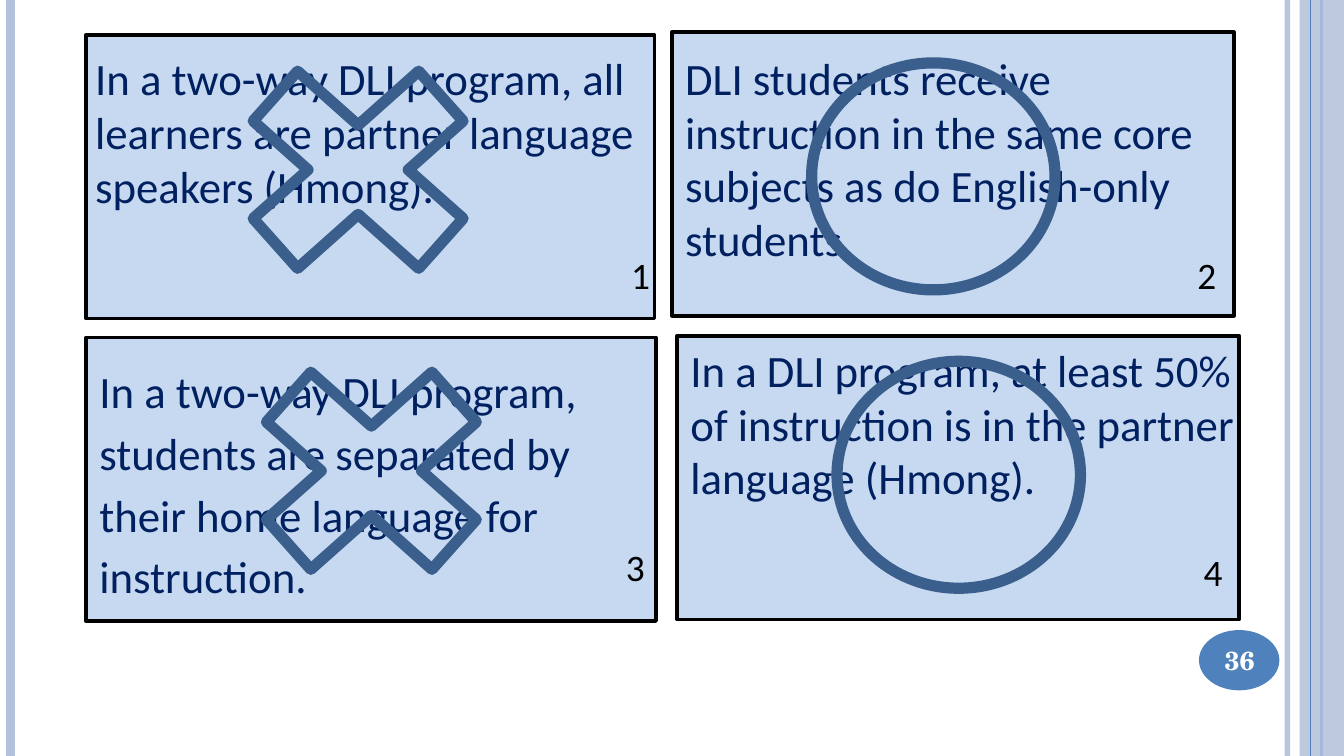
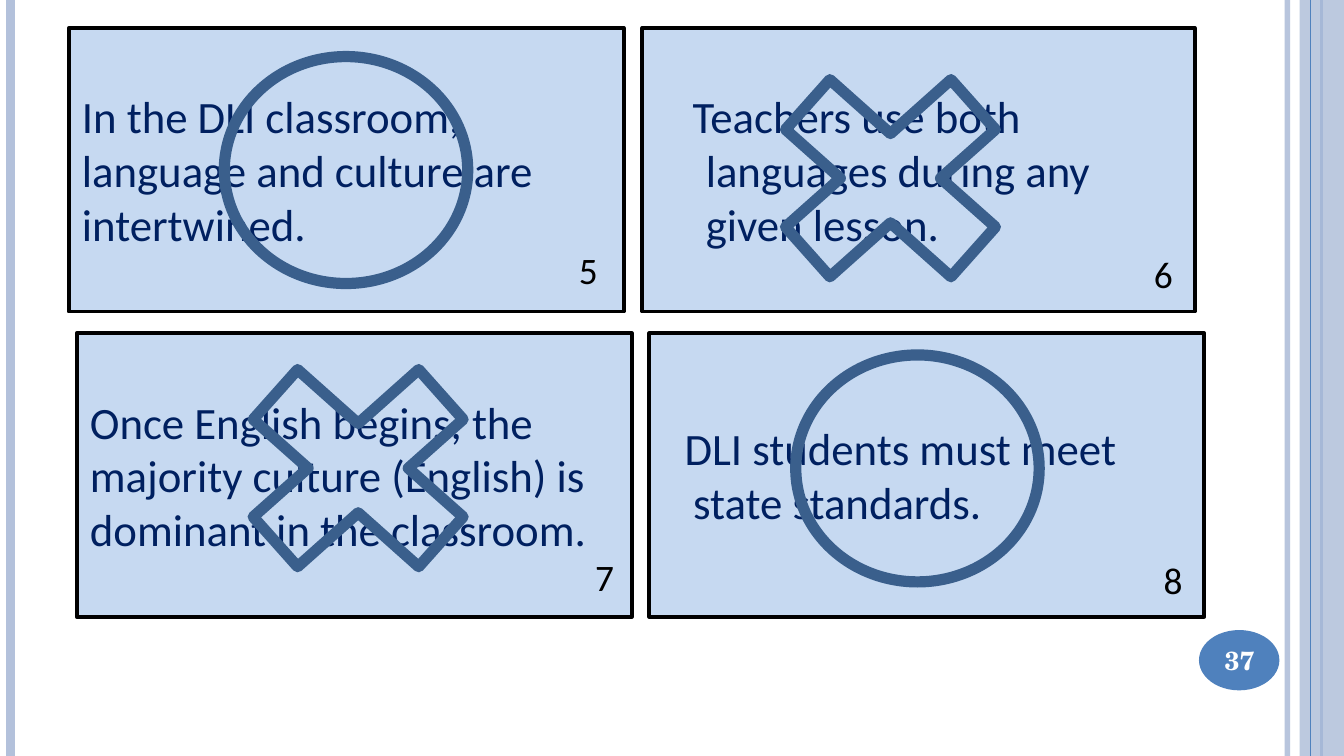
from lxml import etree
from pptx import Presentation
from pptx.dml.color import RGBColor as Rgb
from pptx.enum.shapes import MSO_CONNECTOR as Link, MSO_SHAPE as Form
from pptx.enum.text import MSO_ANCHOR as Anchor, MSO_AUTO_SIZE as Auto, PP_ALIGN as Align
from pptx.oxml.ns import qn
from pptx.util import Cm, Pt

WIDE, HIGH = 25.4, 14.29
PALE, BLUE, CARD = "B3C1DB", "4F81BD", "C6D9F1"
NAVY, MARK, BLACK, WHITE = "002060", "3A5F8C", "000000", "FFFFFF"
SANS, SERIF = "Calibri", "TeX Gyre Schola"


def tint(code):
    return Rgb.from_string(code)


def fade(node, share):
    """Make the first colour under an XML node partly see-through."""
    color = next(node.iter(qn("a:srgbClr")))
    etree.SubElement(color, qn("a:alpha")).set("val", str(share * 1000))


class Deck:
    def __init__(self):
        self.file = Presentation()
        self.file.slide_width, self.file.slide_height = Cm(WIDE), Cm(HIGH)
        self.slide = None

    def page(self, number):
        """Start a slide with the side bands and the number badge."""
        self.slide = self.file.slides.add_slide(self.file.slide_layouts[6])
        back = self.slide.background.fill
        back.solid()
        back.fore_color.rgb = tint(WHITE)
        self.rule(24.33, PALE, 3, 93)
        self.rule(0.2, PALE, 4.5)
        self.rule(24.97, BLUE, 1.5)
        band = self.shape(Form.RECTANGLE, (24.56, 0, 0.84, HIGH), PALE)
        fade(band._element.spPr, 87)
        self.rule(24.77, BLUE, 0.75)
        self.shape(Form.OVAL, (22.66, 11.91, 1.52, 1.14), BLUE)
        badge = self.label(str(number), (22.58, 11.94, 1.7, 1.09), 14, WHITE,
                           SERIF, bold=True, align=Align.CENTER)
        badge.text_frame.auto_size = Auto.NONE
        badge.text_frame.vertical_anchor = Anchor.MIDDLE

    def edge(self, line, color, width):
        line.color.rgb = tint(color)
        line.width = Pt(width)
        etree.SubElement(line._get_or_add_ln(), qn("a:round"))

    def rule(self, x, color, width, share=None):
        """Draw an upright line over the full height."""
        item = self.slide.shapes.add_connector(
            Link.STRAIGHT, Cm(x), Cm(0), Cm(x), Cm(HIGH))
        self.edge(item.line, color, width)
        if share:
            fade(item._element.spPr, share)
        etree.SubElement(item._element.spPr, qn("a:effectLst"))

    def shape(self, form, area, fill=None, line=None, width=2):
        item = self.slide.shapes.add_shape(form, *map(Cm, area))
        item.shadow.inherit = False
        if fill:
            item.fill.solid()
            item.fill.fore_color.rgb = tint(fill)
        else:
            item.fill.background()
        if line:
            self.edge(item.line, line, width)
        else:
            item.line.fill.background()
        return item

    def text(self, frame, words, size, color, font=SANS, bold=False,
             align=Align.LEFT, space=None, dent=None):
        """Fill a frame; dent holds the left edge of first and later lines."""
        frame.word_wrap = True
        para = frame.paragraphs[0]
        para.alignment = align
        para.line_spacing = space
        if dent:
            first, rest = map(Cm, dent)
            props = para._p.get_or_add_pPr()
            props.set("marL", str(rest))
            props.set("indent", str(first - rest))
        for index, part in enumerate(words.split("\n")):
            if index:
                para.add_line_break()
            run = para.add_run()
            run.text = part
            run.font.name, run.font.size, run.font.bold = font, Pt(size), bold
            run.font.color.rgb = tint(color)

    def label(self, words, area, size, color, font=SANS, **style):
        box = self.slide.shapes.add_textbox(*map(Cm, area))
        self.text(box.text_frame, words, size, color, font, **style)
        box.text_frame.auto_size = Auto.SHAPE_TO_FIT_TEXT
        return box

    def card(self, x, y, wide, words="", foot=0.13, **style):
        item = self.shape(Form.RECTANGLE, (x, y, wide, 5.36), CARD, BLACK)
        if words:
            frame = item.text_frame
            frame.vertical_anchor = Anchor.MIDDLE
            frame.margin_bottom = Cm(foot)
            self.text(frame, words, 24, NAVY, **style)

    def note(self, words, x, y, wide, high):
        self.label(words, (x, y, wide, high), 24, NAVY)

    def count(self, number, x, y, fill=None):
        box = self.label(str(number), (x, y, 1.05, 1.12), 20, BLACK)
        if fill:
            box.fill.solid()
            box.fill.fore_color.rgb = tint(fill)

    def cross(self, x, y):
        self.shape(Form.MATH_MULTIPLY, (x, y, 6.02, 5.36), None, MARK, 6)

    def ring(self, x, y):
        self.shape(Form.OVAL, (x, y, 4.6, 4.29), None, MARK, 6)


def main():
    deck = Deck()

    # Statements 1 to 4
    deck.page(36)
    deck.card(1.63, 6.38, 10.77, "In a two-way DLI program, students are separated "
              "by their home language for instruction.", space=1.15)
    deck.card(1.63, 0.66, 10.74)
    deck.card(12.7, 0.61, 10.62, "DLI students receive\ninstruction in the same core "
              "subjects as do English-only students.", foot=0.73)
    deck.card(12.8, 6.35, 10.62)
    deck.note("In a two-way DLI program, all learners are partner language "
              "speakers (Hmong).", 1.55, 0.84, 10.74, 3.94)
    deck.note("In a DLI program, at least 50% of instruction is in the partner "
              "language (Hmong).", 12.8, 6.35, 10.95, 3.33)
    deck.count(1, 11.68, 4.65)
    deck.count(2, 22.38, 4.65)
    deck.count(3, 11.58, 10.16)
    deck.count(4, 22.5, 10.26)
    deck.cross(3.76, 0.53)
    deck.cross(4.01, 6.22)
    deck.ring(15.34, 1.19)
    deck.ring(15.82, 6.83)

    # Statements 5 to 8
    deck.page(37)
    deck.card(12.14, 0.53, 10.44, "Teachers use both\nlanguages during any\n"
              "given lesson.", dent=(0.7, 0.95))
    deck.card(1.45, 6.3, 10.49, "Once English begins, the majority culture (English) "
              "is dominant in the classroom.")
    deck.card(1.3, 0.53, 10.49, "In the DLI classroom, language and culture are "
              "intertwined.")
    deck.card(12.27, 6.3, 10.49, "DLI students must meet\nstate standards.",
              dent=(0.42, 0.58))
    deck.count(5, 10.69, 4.55, CARD)
    deck.count(6, 21.56, 4.62)
    deck.count(7, 11, 10.36)
    deck.count(8, 21.74, 10.41)
    deck.cross(13.82, 0.69)
    deck.cross(3.76, 6.17)
    deck.ring(4.24, 1.07)
    deck.ring(15.04, 6.71)

    deck.file.save("out.pptx")


if __name__ == "__main__":
    main()
